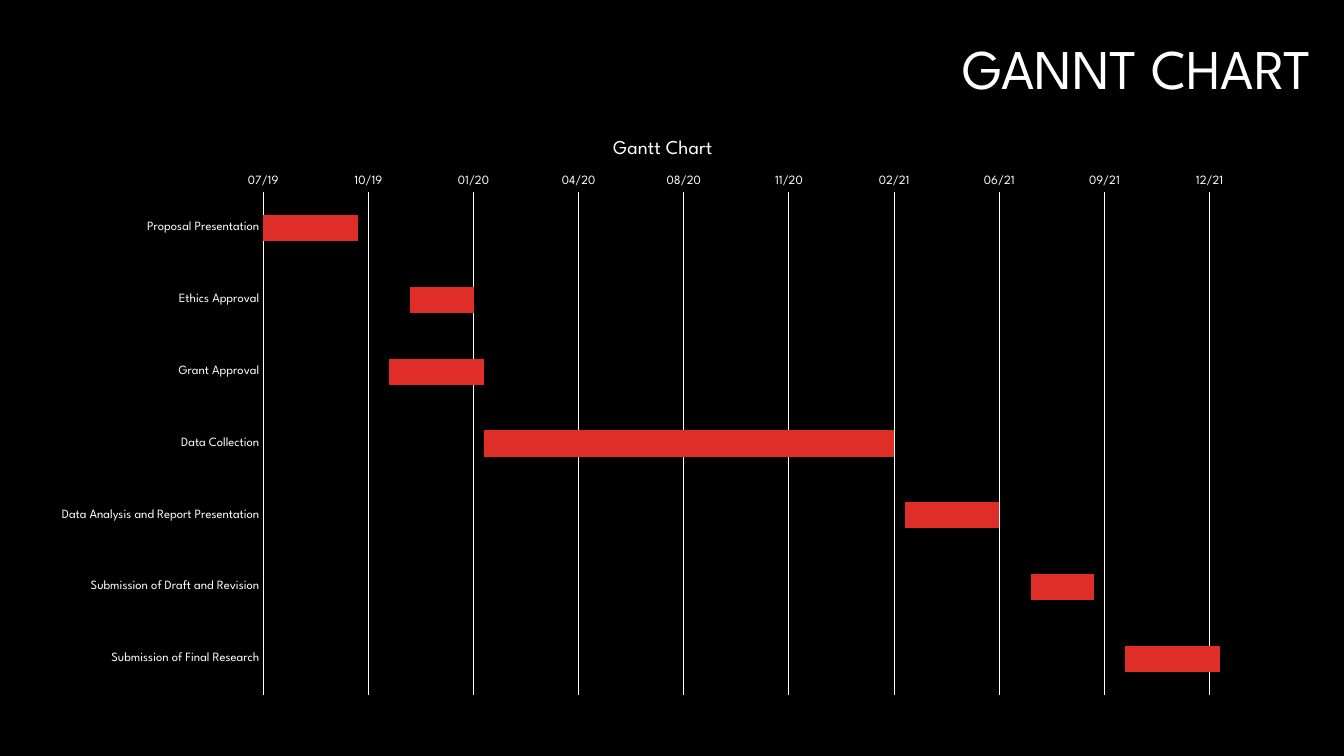
from lxml import etree
from pptx import Presentation
from pptx.chart.data import CategoryChartData
from pptx.dml.color import RGBColor
from pptx.enum.chart import XL_CHART_TYPE, XL_TICK_MARK
from pptx.enum.text import MSO_ANCHOR, PP_ALIGN
from pptx.oxml.ns import qn
from pptx.util import Cm, Pt

COLORS = {"background": "000000", "text": "FFFFFF", "bar": "DF2E28"}
FONT = "League Spartan"
# Task, start day (spreadsheet date number), length in days
TASKS = [
    ("Proposal Presentation", 43650, 90),
    ("Ethics Approval", 43790, 60),
    ("Grant Approval", 43770, 90),
    ("Data Collection", 43860, 390),
    ("Data Analysis and Report Presentation", 44260, 90),
    ("Submission of Draft and Revision", 44380, 60),
    ("Submission of Final Research", 44470, 90),
]


def color(name):
    return RGBColor.from_string(COLORS[name])


def style_font(font, size):
    font.name = FONT
    font.size = Pt(size)
    font.bold = False
    font.color.rgb = color("text")


# Slide
deck = Presentation()
deck.slide_width, deck.slide_height = Cm(33.87), Cm(19.05)
page = deck.slides.add_slide(deck.slide_layouts[6])
page.background.fill.solid()
page.background.fill.fore_color.rgb = color("background")

# Heading
box = page.shapes.add_textbox(Cm(9.37), Cm(0), Cm(23.93), Cm(3.58))
box.text_frame.word_wrap = True
box.text_frame.vertical_anchor = MSO_ANCHOR.MIDDLE
para = box.text_frame.paragraphs[0]
para.alignment = PP_ALIGN.RIGHT
para.line_spacing = 0.9
span = para.add_run()
span.text = "GANNT CHART"
style_font(span.font, 40)

# Chart data: hidden start offsets, then visible durations
names, starts, durations = zip(*TASKS)
data = CategoryChartData()
data.categories = names
data.add_series("Series 1", starts)
data.add_series("Series 2", durations)
chart = page.shapes.add_chart(
    XL_CHART_TYPE.BAR_STACKED, Cm(0.97), Cm(2.97), Cm(31.47), Cm(14.86), data
).chart
style_font(chart.font, 10)
chart.has_legend = False

# Chart title
chart.has_title = True
span = chart.chart_title.text_frame.paragraphs[0].add_run()
span.text = "Gantt Chart"
style_font(span.font, 14)
chart.chart_title.include_in_layout = False

# Bars
plot = chart.plots[0]
plot.gap_width = 175
plot.overlap = 100
plot.vary_by_categories = False
offset, duration = plot.series
offset.format.fill.background()
offset.format.line.fill.background()
duration.format.fill.solid()
duration.format.fill.fore_color.rgb = color("bar")
duration.format.line.fill.background()

# Axes
tasks, dates = chart.category_axis, chart.value_axis
for axis in (tasks, dates):
    axis.major_tick_mark = axis.minor_tick_mark = XL_TICK_MARK.NONE
    style_font(axis.tick_labels.font, 9)
tasks.reverse_order = True
dates.minimum_scale, dates.maximum_scale, dates.major_unit = 43650, 44600, 100
dates.tick_labels.number_format = "mm/yy"
dates.tick_labels.number_format_is_linked = False
dates.format.line.fill.background()
dates.has_major_gridlines = True
for line in (tasks.format.line, dates.major_gridlines.format.line):
    line.color.rgb = color("text")
    line.width = Pt(0.75)

# Inner plot area, as fractions of the chart
plot_area = chart._chartSpace.chart.plotArea
for old in plot_area.findall(qn("c:layout")):
    plot_area.remove(old)
layout = etree.Element(qn("c:layout"))
manual = etree.SubElement(layout, qn("c:manualLayout"))
for tag, value in [("layoutTarget", "inner"), ("xMode", "edge"), ("yMode", "edge"),
                   ("x", "0.18"), ("y", "0.126"), ("w", "0.8"), ("h", "0.853")]:
    etree.SubElement(manual, qn("c:" + tag)).set("val", value)
plot_area.insert(0, layout)

deck.save("out.pptx")
